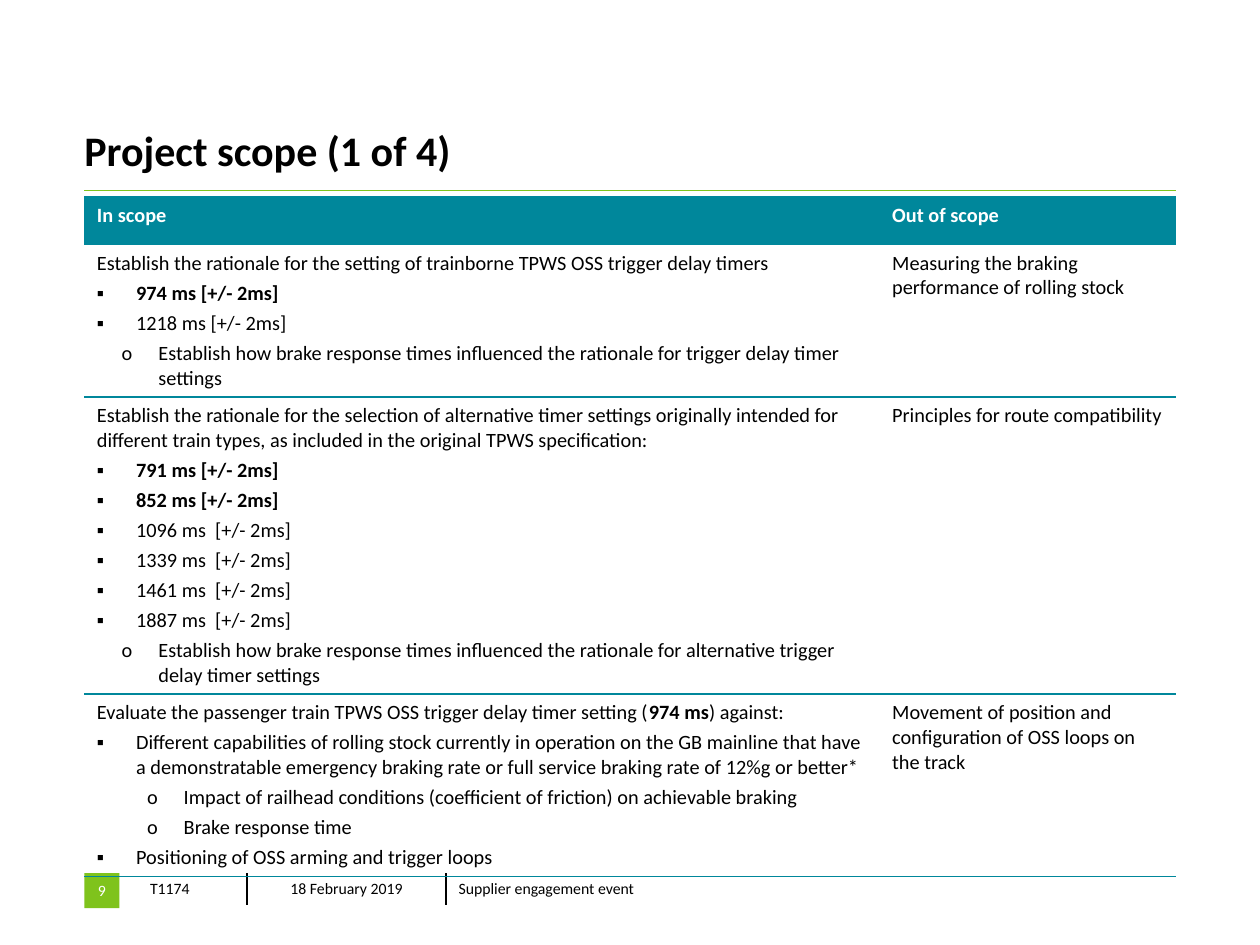
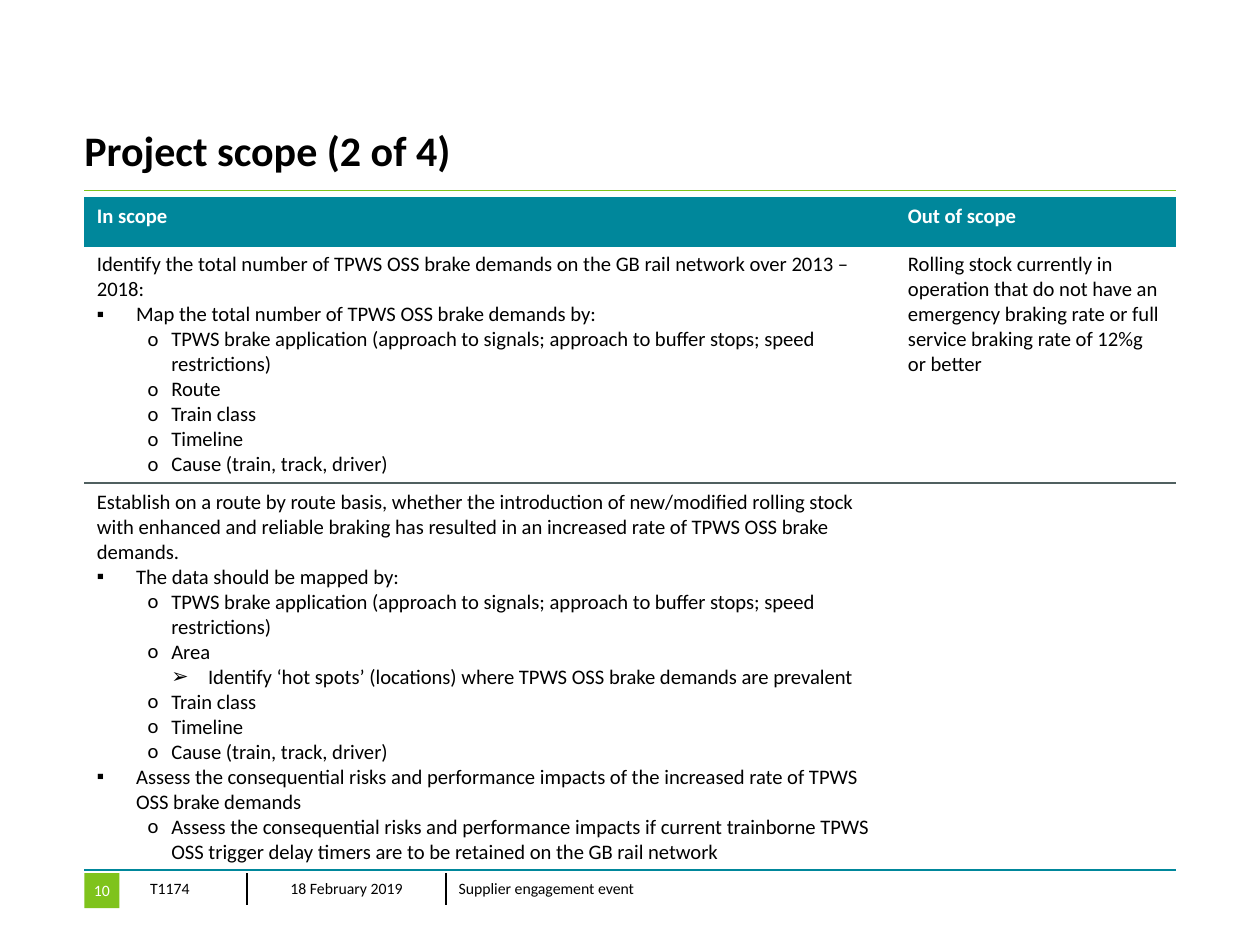
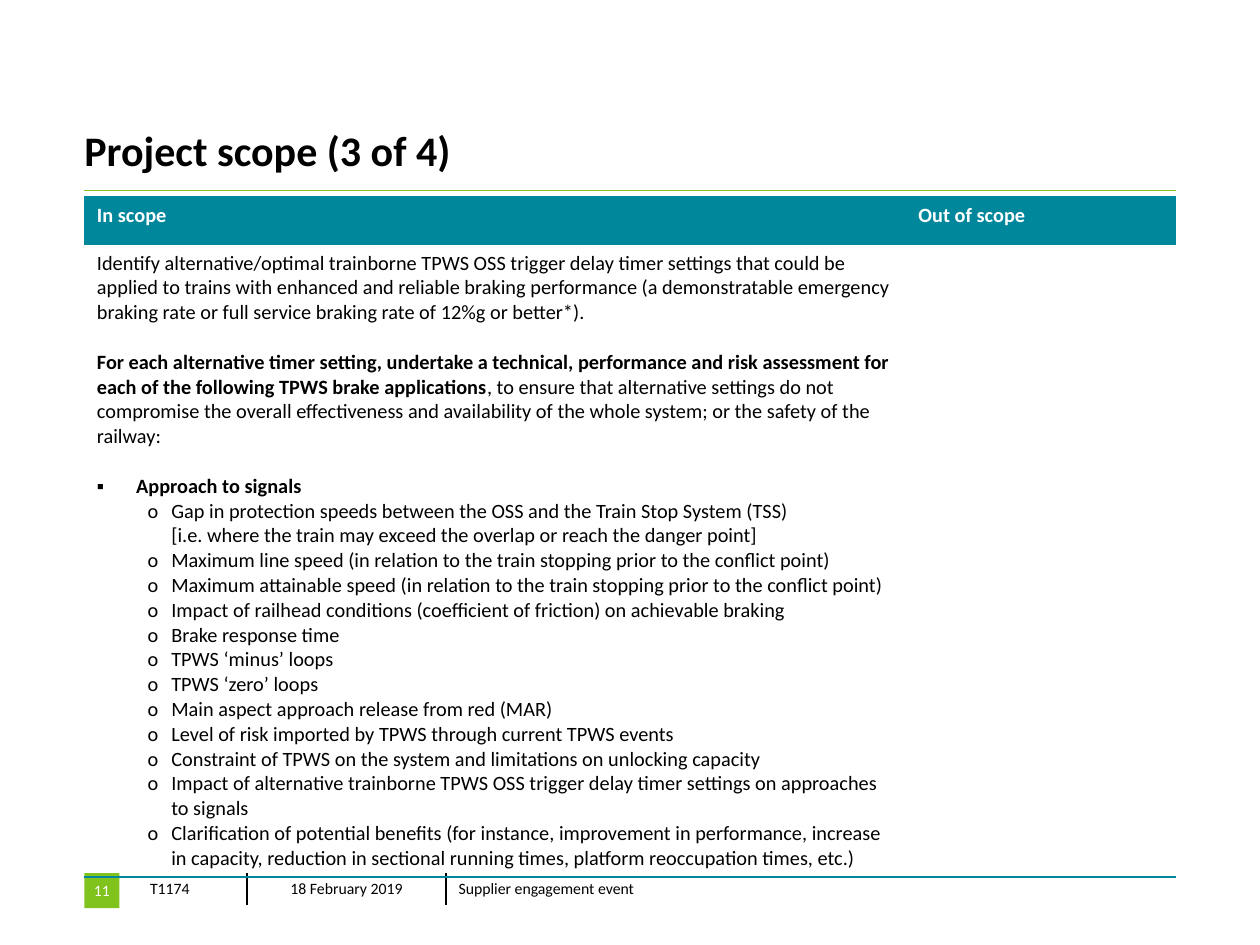
import pptx
import pptx.util
import pptx.dml.color
import pptx.enum.shapes
import pptx.enum.text
import pptx.oxml
import pptx.oxml.ns
from pptx.util import Cm, Pt

# Paragraph kinds: bullet, left margin and hanging indent in cm
KINDS = {
    "square": ("▪", 0.79, 0.79),
    "near": ("o", 1.24, 0.74),
    "far": ("o", 1.75, 0.74),
    "circle": ("o", 1.5, 0.48),
    "arrow": ("➢", 2.24, 0.74),
}

TEAL = pptx.dml.color.RGBColor(0x00, 0x87, 0x9B)
GREEN = pptx.dml.color.RGBColor(0x7F, 0xC3, 0x1C)
BLACK = pptx.dml.color.RGBColor(0x00, 0x00, 0x00)
GREY = pptx.dml.color.RGBColor(0x50, 0x60, 0x60)
WHITE = pptx.dml.color.RGBColor(0xFF, 0xFF, 0xFF)

FONT = "Calibri"
LEFT, WIDTH = 1.7, 22.0
HEADER_HEIGHT = 0.97
FOOTER_TOP = 17.6
FOOTER = [("T1174", 2.21), ("18 February 2019", 4.01), ("Supplier engagement event", 5.38)]
HEADINGS = ("In scope", "Out of scope")
NO_STYLE = "{2D5ABB26-0587-4C30-8999-92F81FD0307C}"

# A row is (height in cm, in-scope paragraphs, out-of-scope text).
# A paragraph is (kind, text); ** marks bold spans, "gap" leaves a line above.
SLIDES = [
    dict(number=9, part=1, top=3.96, split=16.03, size=11.6, after=3, separator=TEAL, rows=[
        (3.07, [
            ("plain", "Establish the rationale for the setting of trainborne TPWS OSS trigger delay timers"),
            ("square", "**974 ms [+/- 2ms]**"),
            ("square", "1218 ms [+/- 2ms]"),
            ("near", "Establish how brake response times influenced the rationale for trigger delay "
                     "timer settings"),
        ], "Measuring the braking performance of rolling stock"),
        (5.99, [
            ("plain", "Establish the rationale for the selection of alternative timer settings originally "
                      "intended for different train types, as included in the original TPWS specification:"),
            ("square", "**791 ms [+/- 2ms]**"),
            ("square", "**852 ms [+/- 2ms]**"),
            ("square", "1096 ms  [+/- 2ms]"),
            ("square", "1339 ms  [+/- 2ms]"),
            ("square", "1461 ms  [+/- 2ms]"),
            ("square", "1887 ms  [+/- 2ms]"),
            ("near", "Establish how brake response times influenced the rationale for alternative "
                     "trigger delay timer settings"),
        ], "Principles for route compatibility"),
        (3.68, [
            ("plain", "Evaluate the passenger train TPWS OSS trigger delay timer setting (**974 ms**) against:"),
            ("square", "Different capabilities of rolling stock currently in operation on the GB mainline "
                       "that have a demonstratable emergency braking rate or full service braking rate of "
                       "12%g or better*"),
            ("far", "Impact of railhead conditions (coefficient of friction) on achievable braking"),
            ("far", "Brake response time"),
            ("square", "Positioning of OSS arming and trigger loops"),
        ], "Movement of position and configuration of OSS loops on the track"),
    ]),
    dict(number=10, part=2, top=3.99, split=16.35, size=11.8, after=0, separator=GREY, rows=[
        (4.78, [
            ("plain", "Identify the total number of TPWS OSS brake demands on the GB rail network over "
                      "2013 – 2018:"),
            ("square", "Map the total number of TPWS OSS brake demands by:"),
            ("circle", "TPWS brake application (approach to signals; approach to buffer stops; speed "
                       "restrictions)"),
            ("circle", "Route"),
            ("circle", "Train class"),
            ("circle", "Timeline"),
            ("circle", "Cause (train, track, driver)"),
        ], "Rolling stock currently in operation that do not have an emergency braking rate or full "
           "service braking rate of 12%g or better"),
        (7.8, [
            ("plain", "Establish on a route by route basis, whether the introduction of new/modified "
                      "rolling stock with enhanced and reliable braking has resulted in an increased rate "
                      "of TPWS OSS brake demands."),
            ("square", "The data should be mapped by:"),
            ("circle", "TPWS brake application (approach to signals; approach to buffer stops; speed "
                       "restrictions)"),
            ("circle", "Area"),
            ("arrow", "Identify ‘hot spots’ (locations) where TPWS OSS brake demands are prevalent"),
            ("circle", "Train class"),
            ("circle", "Timeline"),
            ("circle", "Cause (train, track, driver)"),
            ("square", "Assess the consequential risks and performance impacts of the increased rate of "
                       "TPWS OSS brake demands"),
            ("circle", "Assess the consequential risks and performance impacts if current trainborne TPWS "
                       "OSS trigger delay timers are to be retained on the GB rail network"),
        ], ""),
    ]),
    dict(number=11, part=3, top=3.96, split=16.56, size=11.6, after=0, separator=TEAL, rows=[
        (12.75, [
            ("plain", "Identify alternative/optimal trainborne TPWS OSS trigger delay timer settings that "
                      "could be applied to trains with enhanced and reliable braking performance (a "
                      "demonstratable emergency braking rate or full service braking rate of 12%g or "
                      "better*)."),
            ("plain gap", "**For each alternative timer setting, undertake a technical, performance and "
                          "risk assessment for each of the following TPWS brake applications**, to ensure "
                          "that alternative settings do not compromise the overall effectiveness and "
                          "availability of the whole system; or the safety of the railway:"),
            ("square gap", "**Approach to signals**"),
            ("circle", "Gap in protection speeds between the OSS and the Train Stop System (TSS)\n"
                       "[i.e. where the train may exceed the overlap or reach the danger point]"),
            ("circle", "Maximum line speed (in relation to the train stopping prior to the conflict point)"),
            ("circle", "Maximum attainable speed (in relation to the train stopping prior to the conflict "
                       "point)"),
            ("circle", "Impact of railhead conditions (coefficient of friction) on achievable braking"),
            ("circle", "Brake response time"),
            ("circle", "TPWS ‘minus’ loops"),
            ("circle", "TPWS ‘zero’ loops"),
            ("circle", "Main aspect approach release from red (MAR)"),
            ("circle", "Level of risk imported by TPWS through current TPWS events"),
            ("circle", "Constraint of TPWS on the system and limitations on unlocking capacity"),
            ("circle", "Impact of alternative trainborne TPWS OSS trigger delay timer settings on "
                       "approaches to signals"),
            ("circle", "Clarification of potential benefits (for instance, improvement in performance, "
                       "increase in capacity, reduction in sectional running times, platform reoccupation "
                       "times, etc.)"),
        ], ""),
    ]),
]


def add_child(parent, tag, **attributes):
    child = parent.makeelement(pptx.oxml.ns.qn(tag), attributes)
    parent.append(child)
    return child


def style_font(para, size, color, bold=None):
    font = para.font
    font.name, font.size, font.bold = FONT, Pt(size), bold
    font.color.rgb = color


def write_spans(para, text):
    """Add text as runs, bold between ** marks, with line breaks at newlines."""
    for place, part in enumerate(text.split("**")):
        for line_number, line in enumerate(part.split("\n")):
            if line_number:
                para.add_line_break()
            if line:
                span = para.add_run()
                span.text = line
                if place % 2:
                    span.font.bold = True


def write_cell(cell, paragraphs, size, after):
    frame = cell.text_frame
    for index, (kind, text) in enumerate(paragraphs):
        para = frame.add_paragraph() if index else frame.paragraphs[0]
        write_spans(para, text)
        name, _, gap = kind.partition(" ")
        if name in KINDS:
            bullet, margin, hanging = KINDS[name]
            properties = para._p.get_or_add_pPr()
            properties.set("marL", str(Cm(margin)))
            properties.set("indent", str(-Cm(hanging)))
            add_child(properties, "a:buFont", typeface=FONT)
            add_child(properties, "a:buChar", char=bullet)
        para.space_before = Pt(size * 1.22 if gap else 0)
        para.space_after = Pt(after)
        style_font(para, size, BLACK)


def set_borders(cell, **colors):
    """Draw 1 pt borders; name sides in the order L, R, T, B."""
    properties = cell._tc.get_or_add_tcPr()
    for side, color in colors.items():
        line = add_child(properties, "a:ln" + side, w=str(Pt(1)))
        add_child(add_child(line, "a:solidFill"), "a:srgbClr", val=str(color))


def add_plain_table(page, left, top, widths, heights):
    frame = page.shapes.add_table(len(heights), len(widths), Cm(left), Cm(top),
                                  Cm(sum(widths)), Cm(sum(heights)))
    table = frame.table
    table.first_row = table.horz_banding = False
    table._tbl.tblPr.find(pptx.oxml.ns.qn("a:tableStyleId")).text = NO_STYLE
    for column, width in zip(table.columns, widths):
        column.width = Cm(width)
    for row, height in zip(table.rows, heights):
        row.height = Cm(height)
    return table


def add_title(page, text):
    rule = page.shapes.add_connector(pptx.enum.shapes.MSO_CONNECTOR.STRAIGHT,
                                     Cm(LEFT), Cm(3.84), Cm(LEFT + WIDTH), Cm(3.84))
    rule.line.color.rgb = GREEN
    rule.line.width = Pt(0.6)
    add_child(rule._element.spPr, "a:effectLst")

    box = page.shapes.add_textbox(Cm(LEFT), Cm(1.27), Cm(WIDTH), Cm(2.26))
    frame = box.text_frame
    frame.word_wrap = True
    frame.vertical_anchor = pptx.enum.text.MSO_ANCHOR.BOTTOM
    frame.margin_left = frame.margin_right = frame.margin_top = frame.margin_bottom = 0
    frame.text = text
    style_font(frame.paragraphs[0], 24, BLACK, True)


def add_footer(page, number):
    table = add_plain_table(page, 2.77, FOOTER_TOP, [width for _, width in FOOTER], [0.64])
    for index, (text, _) in enumerate(FOOTER):
        cell = table.cell(0, index)
        cell.text = text
        cell.vertical_anchor = pptx.enum.text.MSO_ANCHOR.MIDDLE
        para = cell.text_frame.paragraphs[0]
        style_font(para, 9, BLACK)
        if index == 1:
            para.alignment = pptx.enum.text.PP_ALIGN.CENTER
            set_borders(cell, L=BLACK, R=BLACK)
        cell.fill.background()

    badge = page.shapes.add_shape(pptx.enum.shapes.MSO_SHAPE.RECTANGLE,
                                  Cm(LEFT), Cm(FOOTER_TOP), Cm(0.71), Cm(0.71))
    badge.shadow.inherit = False
    badge.fill.solid()
    badge.fill.fore_color.rgb = GREEN
    badge.line.fill.background()
    frame = badge.text_frame
    frame.margin_left = frame.margin_right = frame.margin_top = frame.margin_bottom = Cm(0.1)
    frame.vertical_anchor = pptx.enum.text.MSO_ANCHOR.MIDDLE
    frame.text = str(number)
    frame.paragraphs[0].alignment = pptx.enum.text.PP_ALIGN.CENTER
    style_font(frame.paragraphs[0], 9, WHITE)


def add_scope_table(page, top, split, size, after, separator, rows):
    heights = [HEADER_HEIGHT] + [height for height, _, _ in rows]
    table = add_plain_table(page, LEFT, top, [split, WIDTH - split], heights)
    for column, heading in enumerate(HEADINGS):
        cell = table.cell(0, column)
        cell.text = heading
        style_font(cell.text_frame.paragraphs[0], size, WHITE, True)
        set_borders(cell, T=TEAL, B=TEAL)
        cell.fill.solid()
        cell.fill.fore_color.rgb = TEAL

    for index, (_, inside, outside) in enumerate(rows, start=1):
        above = TEAL if index == 1 else separator
        below = TEAL if index == len(rows) else separator
        for column, paragraphs in enumerate((inside, [("plain", outside)])):
            cell = table.cell(index, column)
            write_cell(cell, paragraphs, size, after)
            set_borders(cell, T=above, B=below)
            cell.fill.background()


def main():
    deck = pptx.Presentation()
    deck.slide_width, deck.slide_height = Cm(25.4), Cm(19.05)
    for content in SLIDES:
        page = deck.slides.add_slide(deck.slide_layouts[6])
        add_title(page, f"Project scope ({content['part']} of 4)")
        add_footer(page, content["number"])
        add_scope_table(page, content["top"], content["split"], content["size"],
                        content["after"], content["separator"], content["rows"])
    deck.save("out.pptx")


if __name__ == "__main__":
    main()
